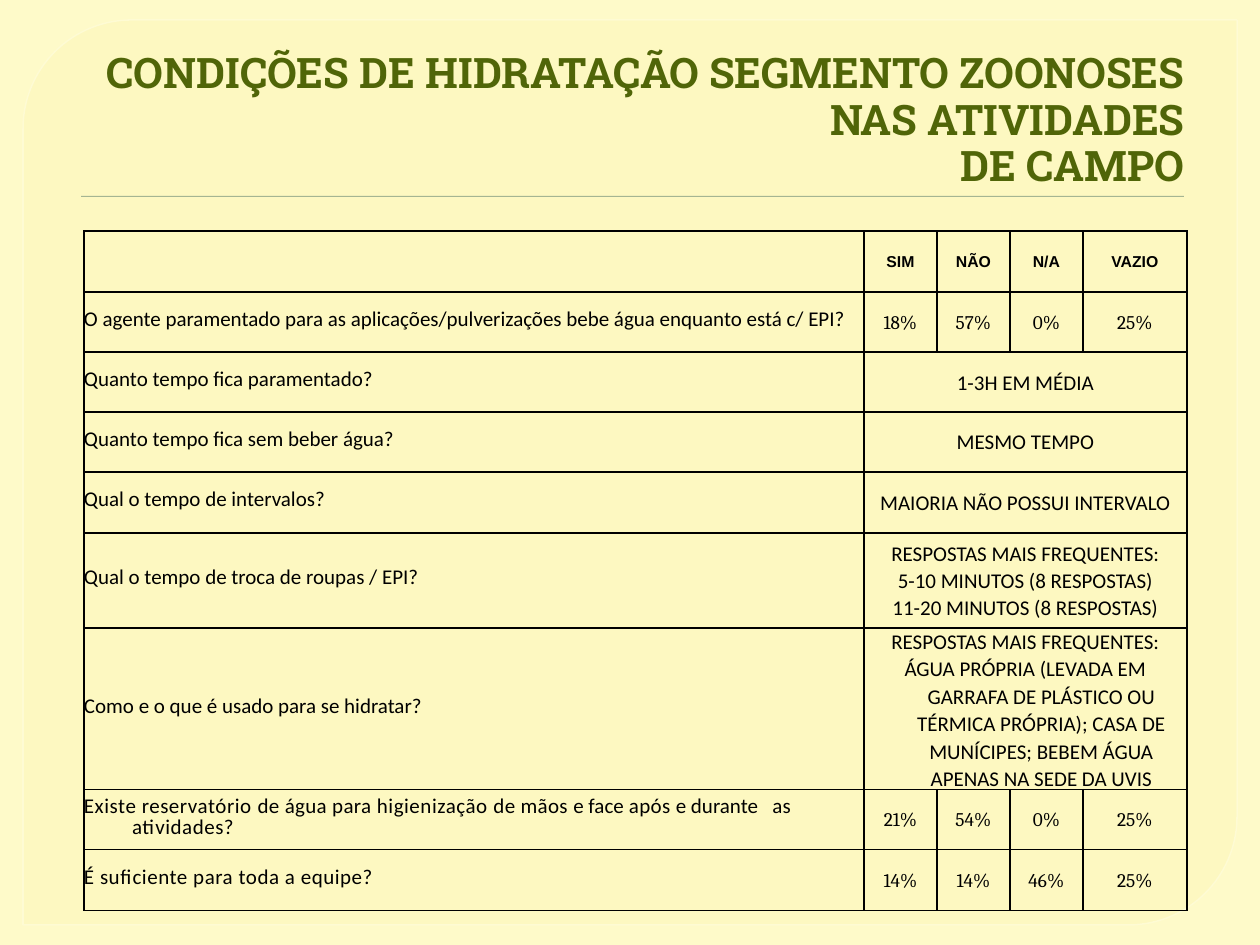
from lxml import etree
from pptx import Presentation
from pptx.dml.color import RGBColor
from pptx.enum.shapes import MSO_SHAPE
from pptx.enum.text import MSO_ANCHOR, PP_ALIGN
from pptx.oxml import parse_xml
from pptx.oxml.ns import qn
from pptx.util import Pt

PX = 914400 / 126
LEFT, MID, RIGHT = PP_ALIGN.LEFT, PP_ALIGN.CENTER, PP_ALIGN.RIGHT
NS = 'xmlns:a="http://schemas.openxmlformats.org/drawingml/2006/main"'
HUES = {"page": "FEFAC9", "panel": "FDF8BE", "edge": "FFFCD6",
        "rule": "A5B592", "title": "506508", "ink": "000000"}


def px(*nums):
    return [round(n * PX) for n in nums]


def write(frame, text, font="Calibri", size=12, bold=False, hue="ink",
          align=MID, gap=1.07, left=32, hang=-32):
    """Fill a frame: one paragraph per line; a line is text or (text, spacing) runs."""
    lines = text.split("\n") if isinstance(text, str) else [text]
    frame.word_wrap = True
    for i, line in enumerate(lines):
        para = frame.add_paragraph() if i else frame.paragraphs[0]
        para.alignment, para.line_spacing = align, gap
        para.space_before = para.space_after = Pt(0)
        props = para._p.get_or_add_pPr()
        props.set("marL", str(px(left)[0]))
        props.set("indent", str(px(hang)[0]))
        if isinstance(line, str):
            para.text = line
        else:
            for part, space in line:
                run = para.add_run()
                run.text = part
                run._r.get_or_add_rPr().set("spc", str(space))
        for run in para.runs:
            run.font.name, run.font.size, run.font.bold = font, Pt(size), bold
            run.font.color.rgb = RGBColor.from_string(HUES[hue])


deck = Presentation()
deck.slide_width, deck.slide_height = px(1260, 945)
slide = deck.slides.add_slide(deck.slide_layouts[6])
back = slide.background.fill
back.solid()
back.fore_color.rgb = RGBColor.from_string(HUES["page"])

# Panel with two rounded corners
panel = slide.shapes.add_shape(MSO_SHAPE.ROUND_2_DIAG_RECTANGLE, *px(23, 20, 1214, 905))
panel.adjustments[0], panel.adjustments[1] = 0.12, 0
panel.shadow.inherit = False
panel.line.width = Pt(0.87)
for fill, hue, alpha in ((panel.fill, "panel", 65), (panel.line.fill, "edge", 88)):
    fill.solid()
    fill.fore_color.rgb = RGBColor.from_string(HUES[hue])
for node, alpha in zip(panel._element.spPr.iter(qn("a:srgbClr")), (65, 88)):
    etree.SubElement(node, qn("a:alpha")).set("val", str(alpha * 1000))

# Rule under the title
rule = slide.shapes.add_shape(MSO_SHAPE.RECTANGLE, *px(81, 196, 1103, 1))
rule.shadow.inherit = False
rule.fill.solid()
rule.fill.fore_color.rgb = RGBColor.from_string(HUES["rule"])
rule.line.fill.background()

# Title
title = slide.shapes.add_textbox(*px(63, 35, 1134, 158)).text_frame
title.vertical_anchor = MSO_ANCHOR.BOTTOM
title.margin_top, title.margin_bottom = px(0, 2)
write(title, "CONDIÇÕES DE HIDRATAÇÃO SEGMENTO ZOONOSES NAS ATIVIDADES\vDE CAMPO",
      font="Roboto Slab", size=24, bold=True, hue="title", align=RIGHT,
      gap=0.92, left=8, hang=0)

# Table: a question, then four figures or one merged answer
rows = [
    ("", "SIM", "NÃO", "N/A", "VAZIO"),
    ("O agente paramentado para as aplicações/pulverizações bebe água enquanto está c/ EPI?",
     "18%", "57%", "0%", "25%"),
    ("Quanto tempo fica paramentado?", "1-3H EM MÉDIA"),
    ("Quanto tempo fica sem beber água?", "MESMO TEMPO"),
    ("Qual o tempo de intervalos?", "MAIORIA NÃO POSSUI INTERVALO"),
    ("Qual o tempo de troca de roupas / EPI?",
     "RESPOSTAS MAIS FREQUENTES:\n5-10 MINUTOS (8 RESPOSTAS)\n11-20 MINUTOS (8 RESPOSTAS)"),
    ("Como e o que é usado para se hidratar?",
     "RESPOSTAS MAIS FREQUENTES:\nÁGUA PRÓPRIA (LEVADA EM GARRAFA DE PLÁSTICO OU "
     "TÉRMICA PRÓPRIA); CASA DE MUNÍCIPES; BEBEM ÁGUA APENAS NA SEDE DA UVIS"),
    ([("Existe reservatório ", 30), ("de água para ", 20), ("higienização ", 30),
      ("de mãos ", 20), ("e face", 0), (" após ", 20), ("e durante   ", 0),
      ("as ", 10), ("atividades?", 30)], "21%", "54%", "0%", "25%"),
    ([("É suficiente para toda a equipe?", 30)], "14%", "14%", "46%", "25%"),
]
wide = [780, 73, 73, 73, 104]
high = [61, 60, 60, 60, 61, 95, 151, 60, 61]
grid = slide.shapes.add_table(len(rows), len(wide),
                              *px(84, 231, sum(wide), sum(high))).table
grid.first_row = grid.horz_banding = False
for col, size in zip(grid.columns, px(*wide)):
    col.width = size
for row, size in zip(grid.rows, px(*high)):
    row.height = size

for r, row in enumerate(rows):
    if len(row) == 2:
        grid.cell(r, 1).merge(grid.cell(r, 4))
    for c in range(len(wide)):
        cell = grid.cell(r, c)
        cell.fill.background()
        cell.vertical_anchor = MSO_ANCHOR.MIDDLE
        cell.margin_left = cell.margin_right = cell.margin_top = cell.margin_bottom = 0
        for i, side in enumerate("LRTB"):
            cell._tc.tcPr.insert(i, parse_xml(
                f'<a:ln{side} {NS} w="12700"><a:solidFill><a:srgbClr val="{HUES["ink"]}"/>'
                f'</a:solidFill></a:ln{side}>'))
        if c >= len(row) or not row[c]:
            continue
        if c == 0:
            look = {"align": LEFT, "gap": Pt(11.5), "left": 48, "hang": -48}
        elif r == 0:
            look = {"font": "Arial", "size": 9, "bold": True}
        elif len(row) > 2:
            look = {"font": "Cambria", "size": 11}
        else:
            look = {}
        write(cell.text_frame, row[c], **look)

deck.save("out.pptx")
